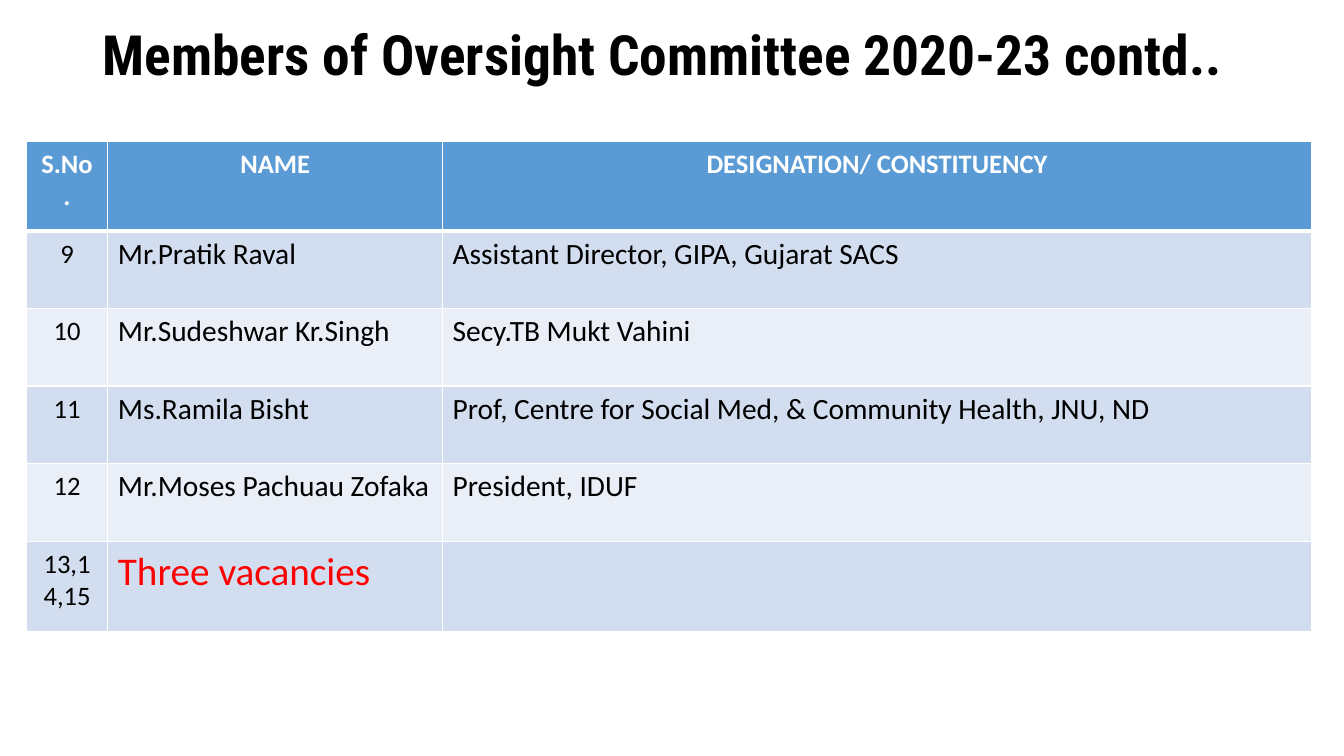
from lxml import etree
from pptx import Presentation
from pptx.dml.color import RGBColor
from pptx.enum import text
from pptx.oxml import ns
from pptx.util import Inches, Pt

TITLE = "Members of Oversight Committee 2020-23 contd.."
HEADER = ("S.No.", "NAME", "DESIGNATION/ CONSTITUENCY")
MEMBERS = [
    ("9", "Mr.Pratik Raval", "Assistant Director, GIPA, Gujarat SACS"),
    ("10", "Mr.Sudeshwar Kr.Singh", "Secy.TB Mukt Vahini"),
    ("11", "Ms.Ramila Bisht", "Prof, Centre for Social Med, & Community Health, JNU, ND"),
    ("12", "Mr.Moses Pachuau Zofaka", "President, IDUF"),
    ("13,14,15", "Three vacancies", ""),
]
COLUMN_WIDTHS = (0.81, 3.32, 8.62)
ROW_HEIGHTS = (0.89, 0.77, 0.77, 0.77, 0.77, 0.9)
BLACK, WHITE, RED = "000000", "FFFFFF", "FF0000"
HEADER_FILL, BAND_FILLS = "5B9BD5", ("D2DEEF", "EAEFF7")


def color(value):
    return RGBColor.from_string(value)


def style(para, size, value, bold=False, name="Calibri"):
    font = para.font
    font.name, font.size, font.bold = name, Pt(size), bold
    font.color.rgb = color(value)


def add_borders(cell, top, bottom):
    """Draw white lines round a cell; top and bottom widths are in points."""
    properties = cell._tc.get_or_add_tcPr()
    sides = (("lnL", 1), ("lnR", 1), ("lnT", top), ("lnB", bottom))
    for index, (side, width) in enumerate(sides):
        line = etree.Element(ns.qn("a:" + side), w=str(Pt(width)))
        fill = etree.SubElement(line, ns.qn("a:solidFill"))
        etree.SubElement(fill, ns.qn("a:srgbClr"), val=WHITE)
        properties.insert(index, line)


def fill_cell(cell, row, column, words):
    heading = row == 0
    centred = heading or column == 0
    cell.fill.solid()
    cell.fill.fore_color.rgb = color(HEADER_FILL if heading else BAND_FILLS[(row - 1) % 2])
    add_borders(cell, top=3 if row == 1 else 1, bottom=3 if heading else 1)
    cell.margin_left = cell.margin_right = Inches(0.13 if centred else 0.1)
    cell.margin_top = cell.margin_bottom = Inches(0.07 if centred else 0)
    para = cell.text_frame.paragraphs[0]
    para.text = words
    if centred:
        para.alignment = text.PP_ALIGN.CENTER
        style(para, 19, WHITE if heading else BLACK, bold=heading)
        return
    vacant = row == len(MEMBERS)
    para.alignment = text.PP_ALIGN.LEFT
    para.line_spacing = 1.15
    para.space_after = Pt(0 if vacant else 10)
    style(para, 28 if vacant else 21, RED if vacant else BLACK)


deck = Presentation()
deck.slide_width, deck.slide_height = Inches(13.33), Inches(7.5)
page = deck.slides.add_slide(deck.slide_layouts[6])

box = page.shapes.add_textbox(Inches(0.92), Inches(0.4), Inches(11.5), Inches(0.35))
box.text_frame.word_wrap = True
box.text_frame.vertical_anchor = text.MSO_ANCHOR.MIDDLE
title = box.text_frame.paragraphs[0]
title.text = TITLE
title.line_spacing = 0.9
style(title, 39.6, BLACK, bold=True, name="Roboto Condensed")

rows = [HEADER] + MEMBERS
table = page.shapes.add_table(
    len(rows), len(HEADER), Inches(0.26), Inches(1.4),
    Inches(sum(COLUMN_WIDTHS)), Inches(sum(ROW_HEIGHTS))).table
for column, width in zip(table.columns, COLUMN_WIDTHS):
    column.width = Inches(width)
for row, height in zip(table.rows, ROW_HEIGHTS):
    row.height = Inches(height)
for r, entries in enumerate(rows):
    for c, words in enumerate(entries):
        fill_cell(table.cell(r, c), r, c, words)

deck.save("out.pptx")
